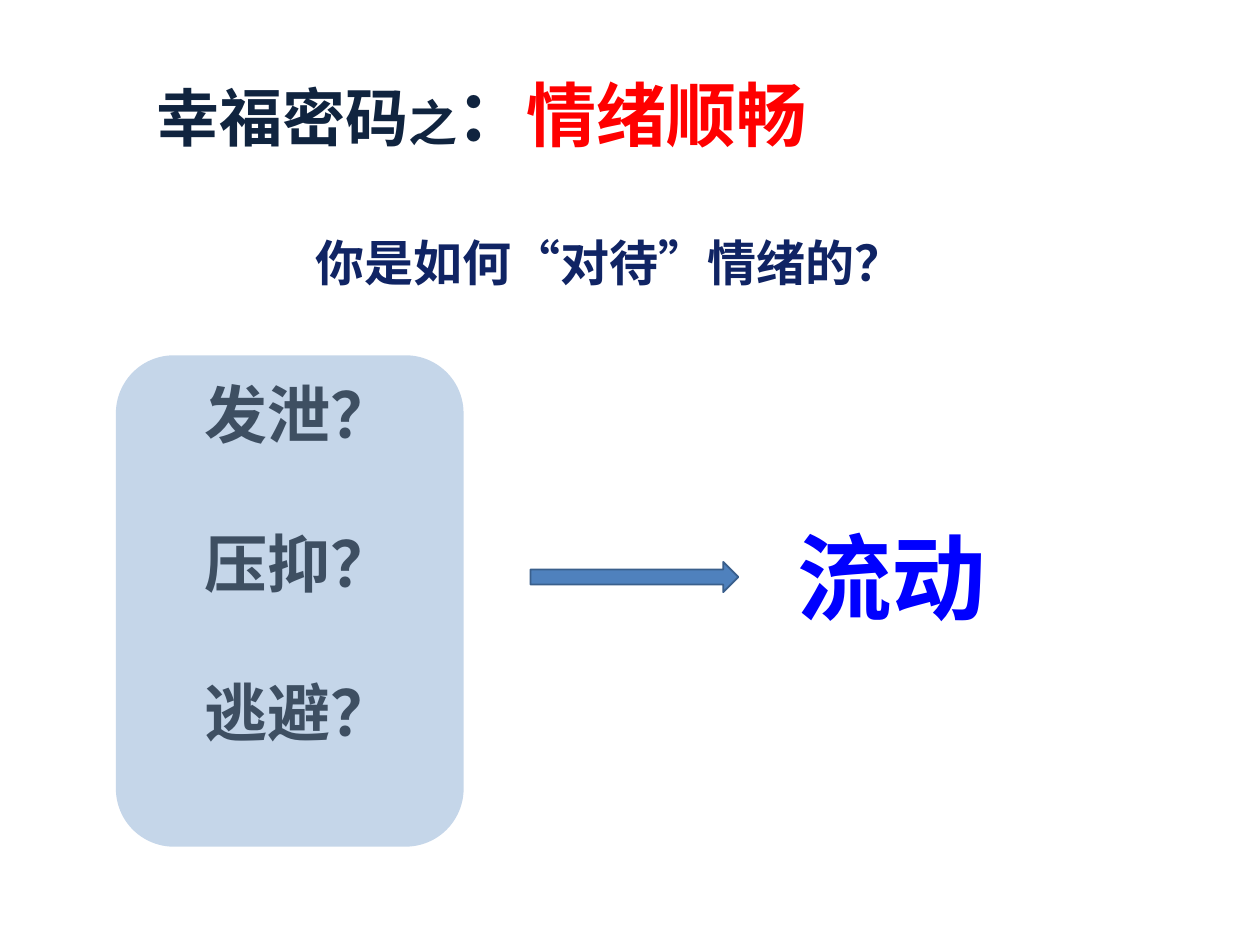
from typing import NamedTuple

from lxml.etree import SubElement
from pptx import Presentation
from pptx.dml.color import RGBColor
from pptx.enum.shapes import MSO_SHAPE
from pptx.enum.text import PP_ALIGN
from pptx.oxml.ns import qn
from pptx.util import Inches, Pt

FONT_NAME = "Noto Sans CJK SC"


class Box(NamedTuple):
    left: float
    top: float
    width: float
    height: float


class Span(NamedTuple):
    text: str
    size: float
    color: str


class TextBlock(NamedTuple):
    box: Box
    paragraphs: list[list[Span]]
    wrap: bool = True
    alignment: PP_ALIGN = PP_ALIGN.LEFT
    line_spacing: float = 1.0
    gap: float = 0


class Figure(NamedTuple):
    preset: MSO_SHAPE
    box: Box
    fill: str
    opacity: int = 100
    line: str | None = None


CHOICES = ["发泄？", "压抑？", "逃避？"]

TEXT_BLOCKS = [
    TextBlock(Box(1.14, 0.52, 8.27, 0.77), [[
        Span("幸福密码", 36, "10243F"),
        Span("之", 28, "10243F"),
        Span("：", 40, "10243F"),
        Span("情绪顺畅", 40, "FF0000"),
    ]]),
    TextBlock(Box(0.56, 3.05, 3.62, 4.76),
              [[Span(choice, 36, "000000")] for choice in CHOICES],
              alignment=PP_ALIGN.CENTER, line_spacing=0.8, gap=50.6),
    TextBlock(Box(2.41, 1.8, 7.2, 0.57),
              [[Span("你是如何“对待”情绪的？", 28, "102464")]]),
    TextBlock(Box(6.23, 4.07, 1.7, 1.01),
              [[Span("流动", 54, "0000FF")]], wrap=False),
]

FIGURES = [
    Figure(MSO_SHAPE.ROUNDED_RECTANGLE, Box(0.92, 2.82, 2.76, 3.9),
           "84A8D1", opacity=47),
    Figure(MSO_SHAPE.RIGHT_ARROW, Box(4.21, 4.46, 1.65, 0.24),
           "4F81BD", line="3A5F8C"),
]


def set_color(color_format, color: str) -> None:
    color_format.rgb = RGBColor.from_string(color)


def add_text(slide, block: TextBlock) -> None:
    shape = slide.shapes.add_textbox(*map(Inches, block.box))
    text_frame = shape.text_frame
    text_frame.word_wrap = block.wrap
    for index, spans in enumerate(block.paragraphs):
        paragraph = text_frame.add_paragraph() if index else text_frame.paragraphs[0]
        paragraph.alignment = block.alignment
        paragraph.line_spacing = block.line_spacing
        if index:
            paragraph.space_before = Pt(block.gap)
        for span in spans:
            run = paragraph.add_run()
            run.text = span.text
            run.font.size = Pt(span.size)
            run.font.bold = True
            run.font.name = FONT_NAME
            set_color(run.font.color, span.color)
            east_asian = SubElement(run.font._element, qn("a:ea"))
            east_asian.set("typeface", FONT_NAME)


def add_figure(slide, figure: Figure) -> None:
    shape = slide.shapes.add_shape(figure.preset, *map(Inches, figure.box))
    shape.shadow.inherit = False
    shape.fill.solid()
    set_color(shape.fill.fore_color, figure.fill)
    if figure.opacity < 100:
        color = shape._element.spPr.find(qn("a:solidFill")).find(qn("a:srgbClr"))
        SubElement(color, qn("a:alpha")).set("val", str(figure.opacity * 1000))
    if figure.line:
        set_color(shape.line.color, figure.line)
        shape.line.width = Pt(1)
    else:
        shape.line.fill.background()


def main() -> None:
    presentation = Presentation()
    presentation.slide_width = Inches(10)
    presentation.slide_height = Inches(7.5)
    slide = presentation.slides.add_slide(presentation.slide_layouts[6])
    for block in TEXT_BLOCKS:
        add_text(slide, block)
    for figure in FIGURES:
        add_figure(slide, figure)
    presentation.save("out.pptx")


if __name__ == "__main__":
    main()
